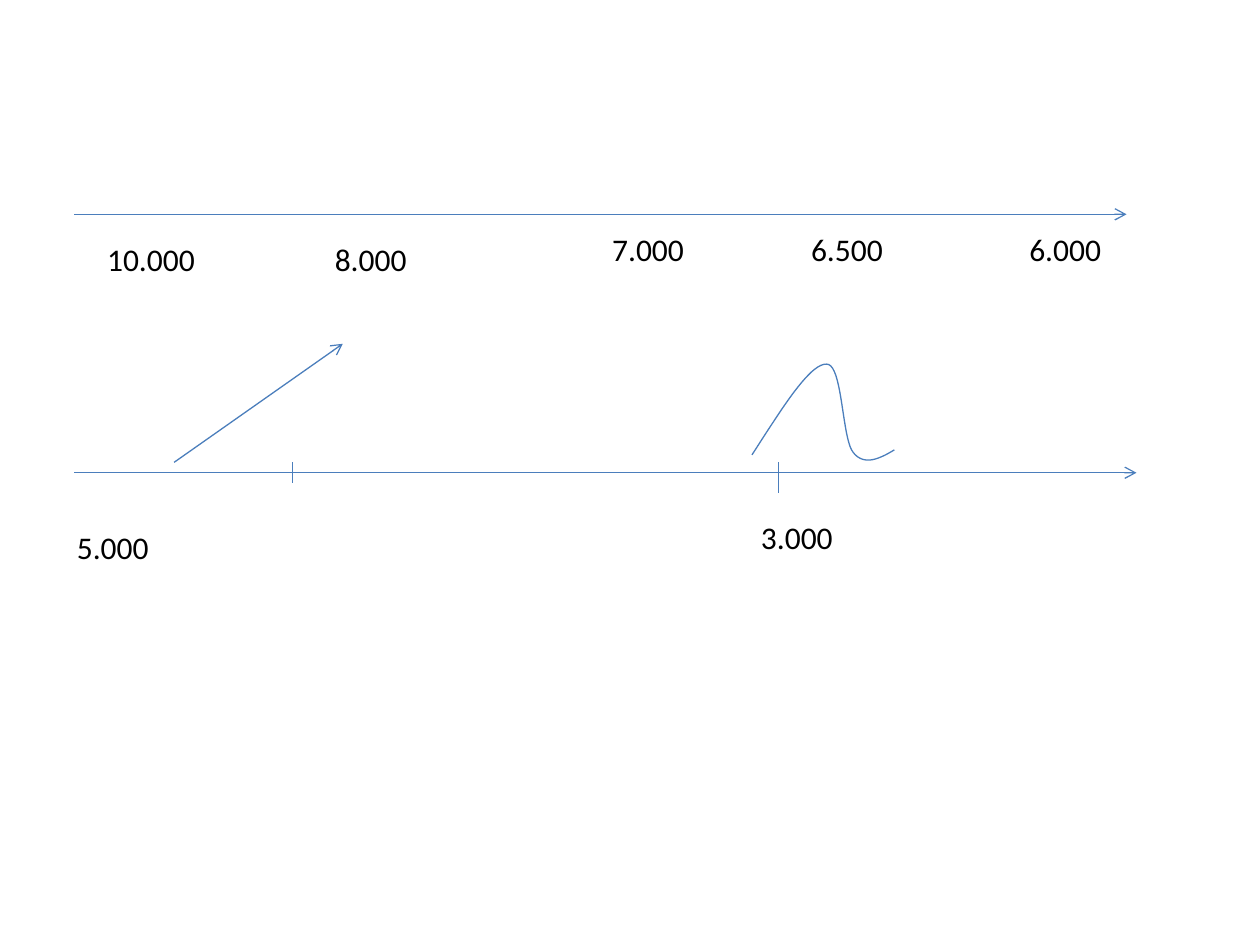
from lxml import etree
from pptx import Presentation
from pptx import util as u
from pptx.dml.color import RGBColor
from pptx.enum import shapes, text
from pptx.oxml.ns import qn

BLUE = "4B7EBC"


def colour(hex_value):
    return RGBColor.from_string(hex_value)


def add_line(page, start, end, arrow=False):
    line = page.shapes.add_connector(
        shapes.MSO_CONNECTOR.STRAIGHT, *[u.Cm(value) for value in start + end])
    line.line.color.rgb = colour(BLUE)
    line.line.width = u.Pt(0.75)
    if arrow:
        etree.SubElement(line.line._get_or_add_ln(), qn("a:tailEnd"), type="arrow")
    etree.SubElement(line._element.spPr, qn("a:effectLst"))


deck = Presentation()
deck.slide_width, deck.slide_height = u.Cm(25.4), u.Cm(19.05)
page = deck.slides.add_slide(deck.slide_layouts[6])

# Two time axes, the rising arrow and the ticks on the lower axis
lower_axis = 9.53
add_line(page, (1.5, 4.32), (22.71, 4.32), arrow=True)
add_line(page, (1.5, lower_axis), (22.91, lower_axis), arrow=True)
add_line(page, (3.51, 9.32), (6.91, 6.93), arrow=True)
for tick_x, tick_bottom in [(5.89, 9.73), (15.7, 9.93)]:
    add_line(page, (tick_x, 9.32), (tick_x, tick_bottom))

# Year labels
font_format = {"name": "Calibri", "size": u.Pt(18)}
frame_format = {"word_wrap": False, "auto_size": text.MSO_AUTO_SIZE.SHAPE_TO_FIT_TEXT}
years = [
    ("10.000", 1.91, 4.72, 2.29),
    ("8.000", 6.5, 4.72, 1.98),
    ("7.000", 12.09, 4.52, 1.98),
    ("6.500", 16.1, 4.52, 1.98),
    ("6.000", 20.5, 4.52, 1.98),
    ("5.000", 1.3, 10.52, 1.98),
    ("3.000", 15.09, 10.31, 1.98),
]
for year, left, top, width in years:
    box = page.shapes.add_textbox(u.Cm(left), u.Cm(top), u.Cm(width), u.Cm(1.02))
    for name, value in frame_format.items():
        setattr(box.text_frame, name, value)
    span = box.text_frame.paragraphs[0].add_run()
    span.text = year
    for name, value in font_format.items():
        setattr(span.font, name, value)
    span.font.color.rgb = colour("000000")

# Rise-and-fall curve: each Bézier piece is two handles and an end point
curve_start = (15.16, 9.17)
curve_pieces = [
    [(15.75, 8.26), (16.31, 7.34), (16.66, 7.34)],
    [(16.99, 7.32), (16.97, 8.84), (17.2, 9.12)],
    [(17.42, 9.4), (17.73, 9.25), (18.03, 9.07)],
]
steps = 20
points = [curve_start]
for handles in curve_pieces:
    controls = [points[-1]] + handles
    for step in range(1, steps + 1):
        t = step / steps
        weights = [(1 - t) ** 3, 3 * t * (1 - t) ** 2, 3 * t ** 2 * (1 - t), t ** 3]
        points.append(tuple(
            sum(weight * control[axis] for weight, control in zip(weights, controls))
            for axis in (0, 1)))
outline = [(u.Cm(x), u.Cm(y)) for x, y in points]
builder = page.shapes.build_freeform(*outline[0])
builder.add_line_segments(outline[1:], close=False)
curve = builder.convert_to_shape()
curve.fill.background()
curve.line.color.rgb = colour(BLUE)
curve.line.width = u.Pt(0.75)
curve.shadow.inherit = False

deck.save("out.pptx")
